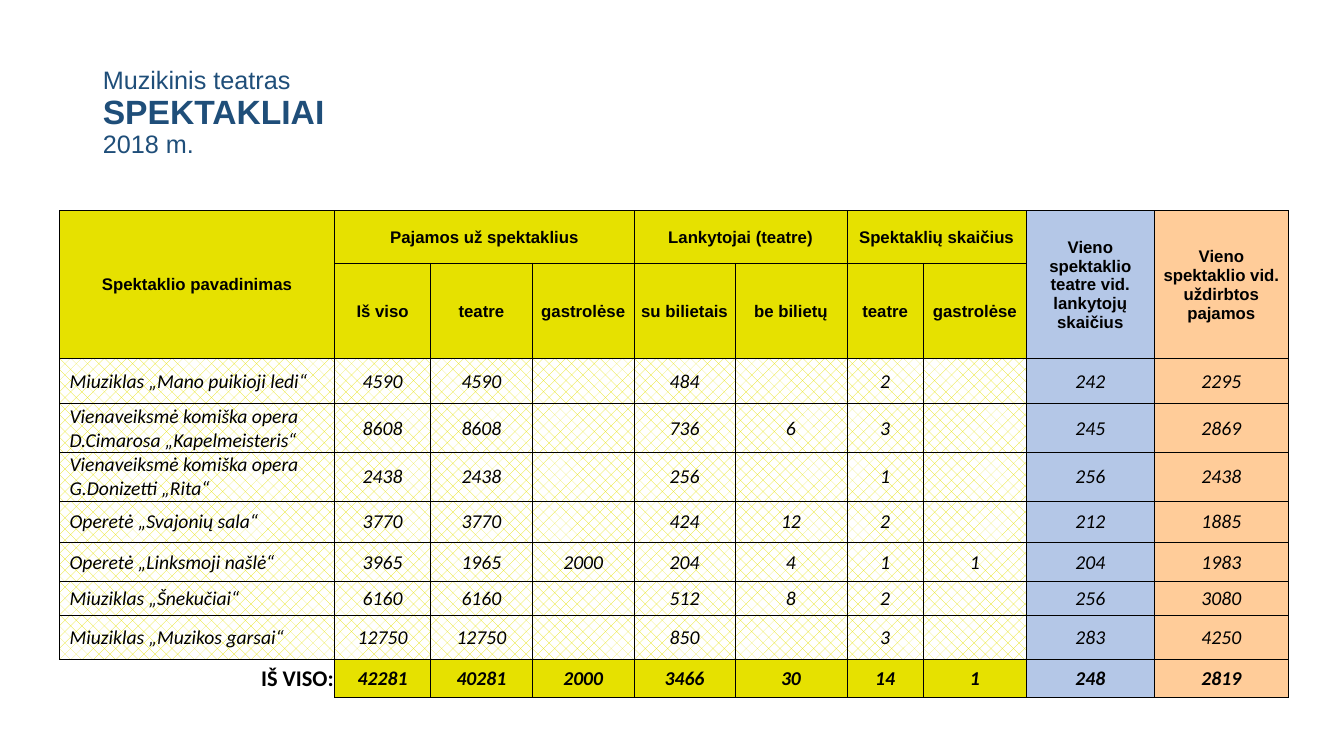
from lxml.etree import SubElement
from pptx import Presentation
from pptx.dml.color import RGBColor
from pptx.enum.dml import MSO_PATTERN
from pptx.enum.text import MSO_ANCHOR, MSO_AUTO_SIZE, PP_ALIGN
from pptx.oxml.ns import qn
from pptx.util import Inches, Pt

NAVY = RGBColor(0x1F, 0x4E, 0x79)
BLACK = RGBColor(0, 0, 0)
WHITE = RGBColor(255, 255, 255)
YELLOW = RGBColor(0xE6, 0xE1, 0x00)
BLUE = RGBColor(0xB4, 0xC7, 0xE7)
ORANGE = RGBColor(0xFF, 0xCC, 0x99)
PLAIN_TABLE_STYLE = "{2D5ABB26-0587-4C30-8999-92F81FD0307C}"

COLUMN_WIDTHS = [2.73, 0.95, 1.01, 1.01, 1, 1.11, 0.76, 1.02, 1.27, 1.33]
ROW_HEIGHTS = [0.52, 0.56, 0.45, 0.47, 0.44, 0.41, 0.39, 0.33, 0.44, 0.38]
MERGES = [(0, 0, 1, 0), (0, 1, 0, 3), (0, 4, 0, 5), (0, 6, 0, 7),
          (0, 8, 1, 8), (0, 9, 1, 9)]
ROWS = [
    ["Spektaklio pavadinimas", "Pajamos už spektaklius", "", "",
     "Lankytojai (teatre)", "", "Spektaklių skaičius", "",
     "Vieno spektaklio teatre vid. lankytojų skaičius",
     "Vieno spektaklio vid. uždirbtos pajamos"],
    ["", "Iš viso", "teatre", "gastrolėse", "su bilietais", "be bilietų",
     "teatre", "gastrolėse", "", ""],
    ["Miuziklas „Mano puikioji ledi“",
     4590, 4590, "", 484, "", 2, "", 242, 2295],
    ["Vienaveiksmė komiška opera\nD.Cimarosa „Kapelmeisteris“",
     8608, 8608, "", 736, 6, 3, "", 245, 2869],
    ["Vienaveiksmė komiška opera\nG.Donizetti „Rita“",
     2438, 2438, "", 256, "", 1, "", 256, 2438],
    ["Operetė „Svajonių sala“", 3770, 3770, "", 424, 12, 2, "", 212, 1885],
    ["Operetė „Linksmoji našlė“", 3965, 1965, 2000, 204, 4, 1, 1, 204, 1983],
    ["Miuziklas „Šnekučiai“", 6160, 6160, "", 512, 8, 2, "", 256, 3080],
    ["Miuziklas „Muzikos garsai“", 12750, 12750, "", 850, "", 3, "", 283, 4250],
    ["IŠ VISO:", 42281, 40281, 2000, 3466, 30, 14, 1, 248, 2819],
]
HEADER_COUNT = 2
TOTAL_ROW = len(ROWS) - 1


def add_text(paragraph, text, font="Calibri", size=14, color=BLACK,
             bold=False, italic=False):
    run = paragraph.add_run()
    run.text = text
    run.font.name, run.font.size = font, Pt(size)
    run.font.bold, run.font.italic = bold, italic
    run.font.color.rgb = color


class SlideBuilder:
    def __init__(self, slide):
        self.slide = slide
        self.border_width = Pt(0.5)

    def title(self, lines, left, top, width, height):
        shape = self.slide.shapes.title
        shape.left, shape.top = Inches(left), Inches(top)
        shape.width, shape.height = Inches(width), Inches(height)
        frame = shape.text_frame
        frame.auto_size = MSO_AUTO_SIZE.NONE
        frame.vertical_anchor = MSO_ANCHOR.MIDDLE
        paragraph = frame.paragraphs[0]
        paragraph.alignment = PP_ALIGN.LEFT
        paragraph.line_spacing = 0.9
        for index, (text, size, bold) in enumerate(lines):
            if index:
                paragraph.add_line_break()
            add_text(paragraph, text, font="Arial", size=size, color=NAVY, bold=bold)

    def table(self, left, top):
        frame = self.slide.shapes.add_table(
            len(ROWS), len(COLUMN_WIDTHS), Inches(left), Inches(top),
            Inches(sum(COLUMN_WIDTHS)), Inches(sum(ROW_HEIGHTS)))
        table = frame.table
        table.first_row = table.horz_banding = False
        table._tbl.tblPr.find(qn("a:tableStyleId")).text = PLAIN_TABLE_STYLE
        for column, width in zip(table.columns, COLUMN_WIDTHS):
            column.width = Inches(width)
        for row, height in zip(table.rows, ROW_HEIGHTS):
            row.height = Inches(height)
        for row, values in enumerate(ROWS):
            for column, value in enumerate(values):
                self.cell(table.cell(row, column), row, column, str(value))
        for first_row, first_column, last_row, last_column in MERGES:
            table.cell(first_row, first_column).merge(
                table.cell(last_row, last_column))

    def cell(self, cell, row, column, text):
        is_header, is_total = row < HEADER_COUNT, row == TOTAL_ROW
        is_name = column == 0 and not is_header
        is_total_label = is_name and is_total
        cell.vertical_anchor = MSO_ANCHOR.MIDDLE
        cell.margin_left = Inches(0.1 if is_name and not is_total else 0.01)
        cell.margin_right = cell.margin_top = Inches(0.01)
        cell.margin_bottom = 0
        self.borders(cell, "RT" if is_total_label else "LRTB")
        self.cell_fill(cell, column, is_header or is_total, is_total_label)

        if is_total_label:
            alignment = PP_ALIGN.RIGHT
        else:
            alignment = PP_ALIGN.LEFT if is_name else PP_ALIGN.CENTER
        if is_header:
            style = dict(font="Arial", size=12, bold=True)
        elif is_total_label:
            style = dict(size=16, bold=True)
        else:
            style = dict(italic=True, bold=is_total)
        if not text:
            return
        for index, line in enumerate(text.split("\n")):
            frame = cell.text_frame
            paragraph = frame.add_paragraph() if index else frame.paragraphs[0]
            paragraph.alignment = alignment
            add_text(paragraph, line, **style)

    def cell_fill(self, cell, column, is_solid, is_empty):
        if is_empty:
            cell.fill.background()
        elif is_solid or column >= 8:
            cell.fill.solid()
            cell.fill.fore_color.rgb = {8: BLUE, 9: ORANGE}.get(column, YELLOW)
        else:
            cell.fill.patterned()
            cell.fill.pattern = MSO_PATTERN.PERCENT_25
            cell.fill.fore_color.rgb = YELLOW
            cell.fill.back_color.rgb = WHITE

    def borders(self, cell, sides):
        properties = cell._tc.get_or_add_tcPr()
        for side in "LRTB":
            if side in sides:
                line = SubElement(properties, qn(f"a:ln{side}"),
                                  w=str(self.border_width))
                fill = SubElement(line, qn("a:solidFill"))
                SubElement(fill, qn("a:srgbClr"), val=str(BLACK))


def main():
    presentation = Presentation()
    presentation.slide_width = Inches(13.33)
    presentation.slide_height = Inches(7.5)
    title_only = presentation.slide_layouts[5]
    builder = SlideBuilder(presentation.slides.add_slide(title_only))

    # Heading
    builder.title([("Muzikinis teatras", 18, False), ("SPEKTAKLIAI", 24, True),
                   ("2018 m.", 18, False)], 0.92, 0.4, 11.5, 1.45)

    # Income and attendance by performance
    builder.table(0.59, 2.09)

    presentation.save("out.pptx")


if __name__ == "__main__":
    main()
